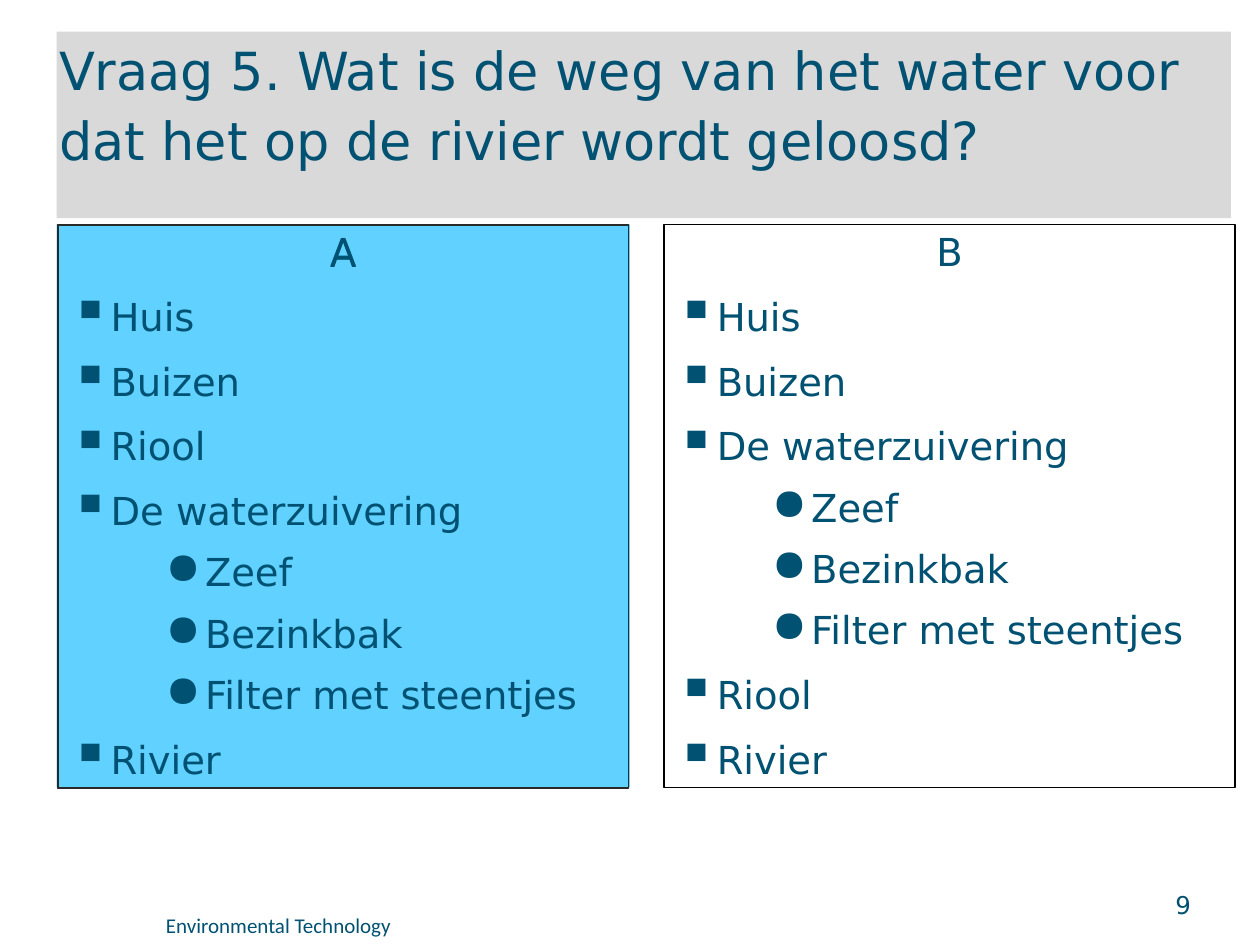
"""Build the quiz slide on the route of waste water, with answers A and B."""
from lxml import etree
from pptx import Presentation
from pptx import util as u
from pptx.dml.color import RGBColor
from pptx.enum import shapes, text
from pptx.oxml import ns

Pt = u.Pt
TEAL = RGBColor(0x00, 0x51, 0x72)
BLUE = RGBColor(0x61, 0xD1, 0xFF)
GREY = RGBColor(0xD9, 0xD9, 0xD9)
DARK = RGBColor(0x29, 0x29, 0x29)
BLACK = RGBColor(0, 0, 0)
FONT = "DejaVu Sans"

TITLE = "Vraag 5. Wat is de weg van het water voor dat het op de rivier wordt geloosd?"
TREATMENT = [("De waterzuivering", 0), ("Zeef", 1), ("Bezinkbak", 1), ("Filter met steentjes", 1)]
ROUTE_A = [("Huis", 0), ("Buizen", 0), ("Riool", 0), *TREATMENT, ("Rivier", 0)]
ROUTE_B = [("Huis", 0), ("Buizen", 0), *TREATMENT, ("Riool", 0), ("Rivier", 0)]

PANEL_TOP, PANEL_WIDTH, PANEL_HEIGHT = 128.2, 326.2, 321.8
LEFT_A, LEFT_B = 33.1, 379.5
PANELS = [
    ("A", [], LEFT_A, PANEL_TOP + 0.7, DARK),
    ("B", ROUTE_B, LEFT_B, PANEL_TOP, BLACK),
    ("A", ROUTE_A, LEFT_A, PANEL_TOP, DARK),
]
FOOTERS = [
    ("9", (664.6, 504, 55.4, 23.8), 14, FONT, 18, True),
    ("Environmental Technology", (87.8, 517.7, 146.9, 21.6), 12, "Calibri", None, False),
]
BULLETS = [
    {"mark": "▪", "percent": 140, "indent": 20, "hang": 20, "before": 12},
    {"mark": "●", "percent": 115, "indent": 77, "hang": 22.5, "before": 10},
]


def add_rectangle(page, place, fill=None, line=None):
    box = page.shapes.add_shape(shapes.MSO_SHAPE.RECTANGLE, *map(Pt, place))
    box.shadow.inherit = False
    if fill is None:
        box.fill.background()
    else:
        box.fill.solid()
        box.fill.fore_color.rgb = fill
    if line is None:
        box.line.fill.background()
    else:
        box.line.color.rgb = line
        box.line.width = Pt(0.75)
    box.text_frame.word_wrap = True
    box.text_frame.vertical_anchor = text.MSO_ANCHOR.TOP
    return box


def style(para, size, spacing=None, font=FONT, align=text.PP_ALIGN.LEFT):
    para.alignment = align
    if spacing:
        para.line_spacing = Pt(spacing)
    for span in para.runs:
        span.font.name = font
        span.font.size = Pt(size)
        span.font.color.rgb = TEAL


def add_bullet(para, level):
    bullet = BULLETS[level]
    para.level = level
    para.space_before = Pt(bullet["before"])
    props = para._p.get_or_add_pPr()
    props.set("marL", str(Pt(bullet["indent"])))
    props.set("indent", str(-Pt(bullet["hang"])))
    color = etree.SubElement(props, ns.qn("a:buClr"))
    etree.SubElement(color, ns.qn("a:srgbClr"), val=str(TEAL))
    etree.SubElement(props, ns.qn("a:buSzPct"), val=str(bullet["percent"] * 1000))
    etree.SubElement(props, ns.qn("a:buChar"), char=bullet["mark"])


def add_panel(page, heading, steps, left, top, line):
    frame = add_rectangle(page, (left, top, PANEL_WIDTH, PANEL_HEIGHT), line=line).text_frame
    frame.text = heading
    style(frame.paragraphs[0], 22, 25, align=text.PP_ALIGN.CENTER)
    for step, level in steps:
        para = frame.add_paragraph()
        para.text = step
        style(para, 22, 25)
        add_bullet(para, level)


def add_title(page):
    frame = add_rectangle(page, (32.4, 18, 671, 106.6), fill=GREY).text_frame
    frame.margin_left, frame.margin_top = Pt(1.4), 0
    frame.margin_right, frame.margin_bottom = Pt(7.2), Pt(25.2)
    frame.text = TITLE
    style(frame.paragraphs[0], 30, 40)


def add_footer(page, words, place, size, font, spacing, wrap):
    frame = page.shapes.add_textbox(*map(Pt, place)).text_frame
    frame.word_wrap = wrap
    frame.text = words
    style(frame.paragraphs[0], size, spacing, font)


def main():
    deck = Presentation()
    deck.slide_width, deck.slide_height = Pt(720), Pt(540)
    page = deck.slides.add_slide(deck.slide_layouts[6])
    for footer in FOOTERS:
        add_footer(page, *footer)
    add_rectangle(page, (32.4, PANEL_TOP, 327.6, PANEL_HEIGHT), fill=BLUE)
    add_title(page)
    for panel in PANELS:
        add_panel(page, *panel)
    deck.save("out.pptx")


if __name__ == "__main__":
    main()
